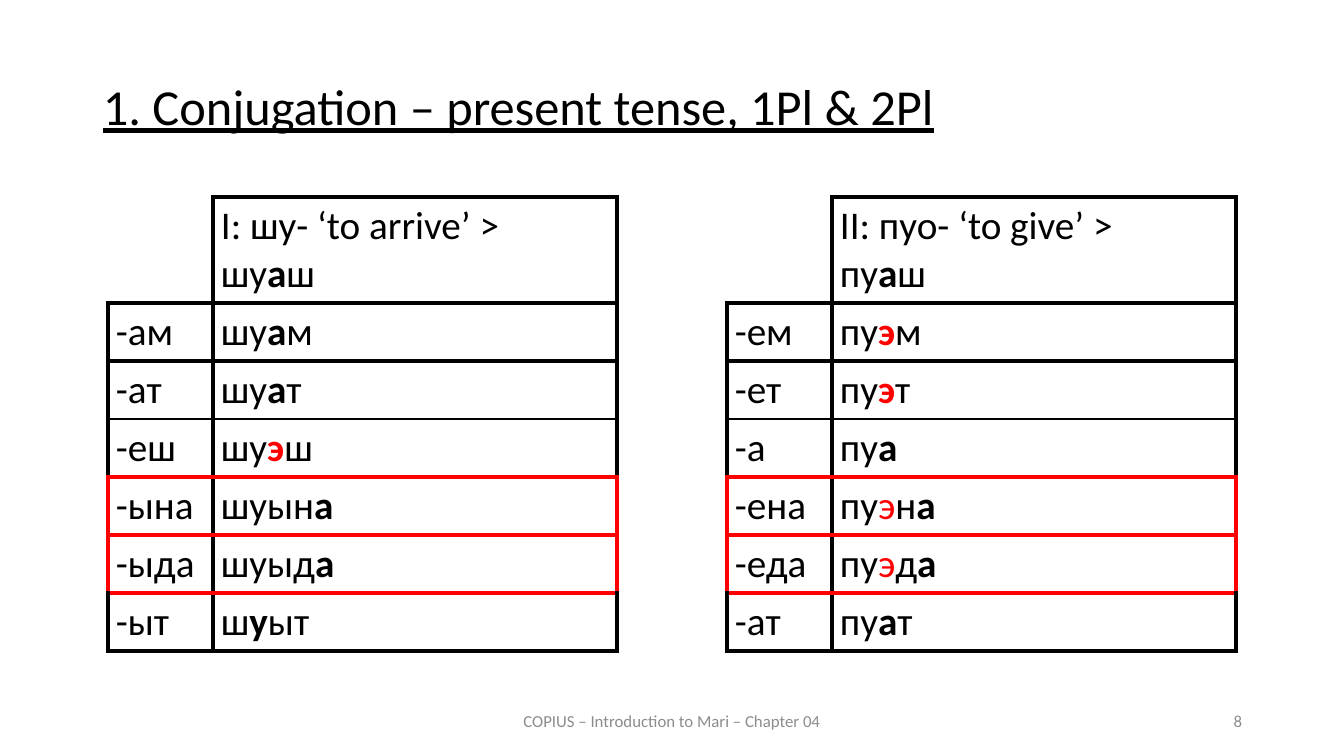
from dataclasses import dataclass

from lxml.etree import SubElement
from pptx import Presentation
from pptx.dml.color import RGBColor
from pptx.enum.text import MSO_ANCHOR, PP_ALIGN
from pptx.oxml.ns import qn
from pptx.util import Emu, Pt


@dataclass(frozen=True)
class Theme:
    """Colours, font and type sizes of the slide."""
    font: str = "Calibri"
    ink: str = "000000"
    accent: str = "FF0000"
    muted: str = "8C8C8C"
    title_size: int = 36
    table_size: int = 28
    footer_size: int = 12


THEME = Theme()
THICK, THIN = (THEME.ink, 3), (THEME.ink, 1)
RED = (THEME.accent, 3)
ROW_LINES = [THICK, THICK, THICK, THIN, RED, RED, RED, THICK]
MARKED_ROWS = (4, 5)
ENDING_WIDTH, HEADER_HEIGHT, ROW_HEIGHT = 105, 106, 58

FIRST_CONJUGATION = [
    ("", "I: шу- ‘to arrive’ >\nшу|*а|ш"),
    ("-ам", "шу|*а|м"),
    ("-ат", "шу|*а|т"),
    ("-еш", "шу|*э|ш"),
    ("-ына", "шуын|*а"),
    ("-ыда", "шуыд|*а"),
    ("-ыт", "ш|*у|ыт"),
]
SECOND_CONJUGATION = [
    ("", "II: пуо- ‘to give’ >\nпу|*а|ш"),
    ("-ем", "пу|*э|м"),
    ("-ет", "пу|*э|т"),
    ("-а", "пу|*а"),
    ("-ена", "пу|э|н|*а"),
    ("-еда", "пу|э|д|*а"),
    ("-ат", "пу|*а|т"),
]


def px(length):
    """Turn slide pixels into EMU."""
    return Emu(round(length * 914400 / 100.8))


def set_font(paragraph, size, color):
    """Give a paragraph the theme font in a size and colour."""
    paragraph.font.name = THEME.font
    paragraph.font.size = Pt(size)
    paragraph.font.color.rgb = RGBColor.from_string(color)


def add_text(slide, box, text, size, color, alignment, anchor):
    """Add a one-paragraph text box and return its paragraph."""
    frame = slide.shapes.add_textbox(*map(px, box)).text_frame
    frame.word_wrap = True
    frame.vertical_anchor = anchor
    paragraph = frame.paragraphs[0]
    paragraph.text = text
    paragraph.alignment = alignment
    set_font(paragraph, size, color)
    return paragraph


def add_title(slide, box):
    """Add the underlined heading."""
    paragraph = add_text(slide, box, "1. Conjugation – present tense, 1Pl & 2Pl",
                         THEME.title_size, THEME.ink, PP_ALIGN.JUSTIFY, MSO_ANCHOR.TOP)
    paragraph.font.underline = True
    paragraph.line_spacing = 0.9
    paragraph.space_before = Pt(12)


def add_footer(slide, box):
    """Add the centred course name and the slide number at the right."""
    left, top, width, height = box
    name_width, number_width = 454, 302
    name_left = left + (width - name_width) // 2
    number_left = left + width - number_width
    for text, text_left, text_width, alignment in (
        ("COPIUS – Introduction to Mari – Chapter 04", name_left, name_width, PP_ALIGN.CENTER),
        ("8", number_left, number_width, PP_ALIGN.RIGHT),
    ):
        add_text(slide, (text_left, top, text_width, height), text,
                 THEME.footer_size, THEME.muted, alignment, MSO_ANCHOR.MIDDLE)


def fill_cell(cell, text):
    """Write lines of runs split by bars: a star means bold, э is red."""
    cell.fill.background()
    cell.margin_left = cell.margin_right = px(8)
    cell.margin_top = cell.margin_bottom = px(5)
    frame = cell.text_frame
    for index, line in enumerate(text.split("\n")):
        paragraph = frame.add_paragraph() if index else frame.paragraphs[0]
        set_font(paragraph, THEME.table_size, THEME.ink)
        for piece in filter(None, line.split("|")):
            run = paragraph.add_run()
            run.text = piece.lstrip("*")
            if piece.startswith("*"):
                run.font.bold = True
            if run.text == "э":
                run.font.color.rgb = RGBColor.from_string(THEME.accent)


def set_borders(cell, borders):
    """Draw the left, right, top and bottom borders of a cell."""
    properties = cell._tc.get_or_add_tcPr()
    for index, (side, border) in enumerate(zip("LRTB", borders)):
        line = SubElement(properties, qn(f"a:ln{side}"))
        properties.insert(index, line)
        if border is None:
            SubElement(line, qn("a:noFill"))
            continue
        color, width = border
        line.set("w", str(Pt(width)))
        fill = SubElement(line, qn("a:solidFill"))
        SubElement(fill, qn("a:srgbClr")).set("val", color)


def add_conjugation(slide, box, rows):
    """Add a table of endings and verb forms with the plural rows in red."""
    table = slide.shapes.add_table(len(rows), 2, *map(px, box)).table
    table.first_row = table.horz_banding = False
    table.columns[0].width = px(ENDING_WIDTH)
    table.columns[1].width = px(box[2] - ENDING_WIDTH)
    for index, (ending, form) in enumerate(rows):
        table.rows[index].height = px(ROW_HEIGHT if index else HEADER_HEIGHT)
        outer = RED if index in MARKED_ROWS else THICK
        top, bottom = ROW_LINES[index:index + 2]
        ending_cell, form_cell = table.cell(index, 0), table.cell(index, 1)
        fill_cell(ending_cell, ending)
        fill_cell(form_cell, form)
        set_borders(ending_cell, (outer if index else None, THICK, top if index else None, bottom))
        set_borders(form_cell, (THICK, outer, top, bottom))


def main():
    """Build and save the slide."""
    presentation = Presentation()
    presentation.slide_width, presentation.slide_height = px(1344), px(756)
    slide = presentation.slides.add_slide(presentation.slide_layouts[6])
    add_title(slide, (93, 77, 1159, 603))
    add_footer(slide, (92, 701, 1160, 40))
    table_height = HEADER_HEIGHT + 6 * ROW_HEIGHT
    for left, rows in ((108, FIRST_CONJUGATION), (727, SECOND_CONJUGATION)):
        add_conjugation(slide, (left, 197, 509, table_height), rows)
    presentation.save("out.pptx")


if __name__ == "__main__":
    main()
